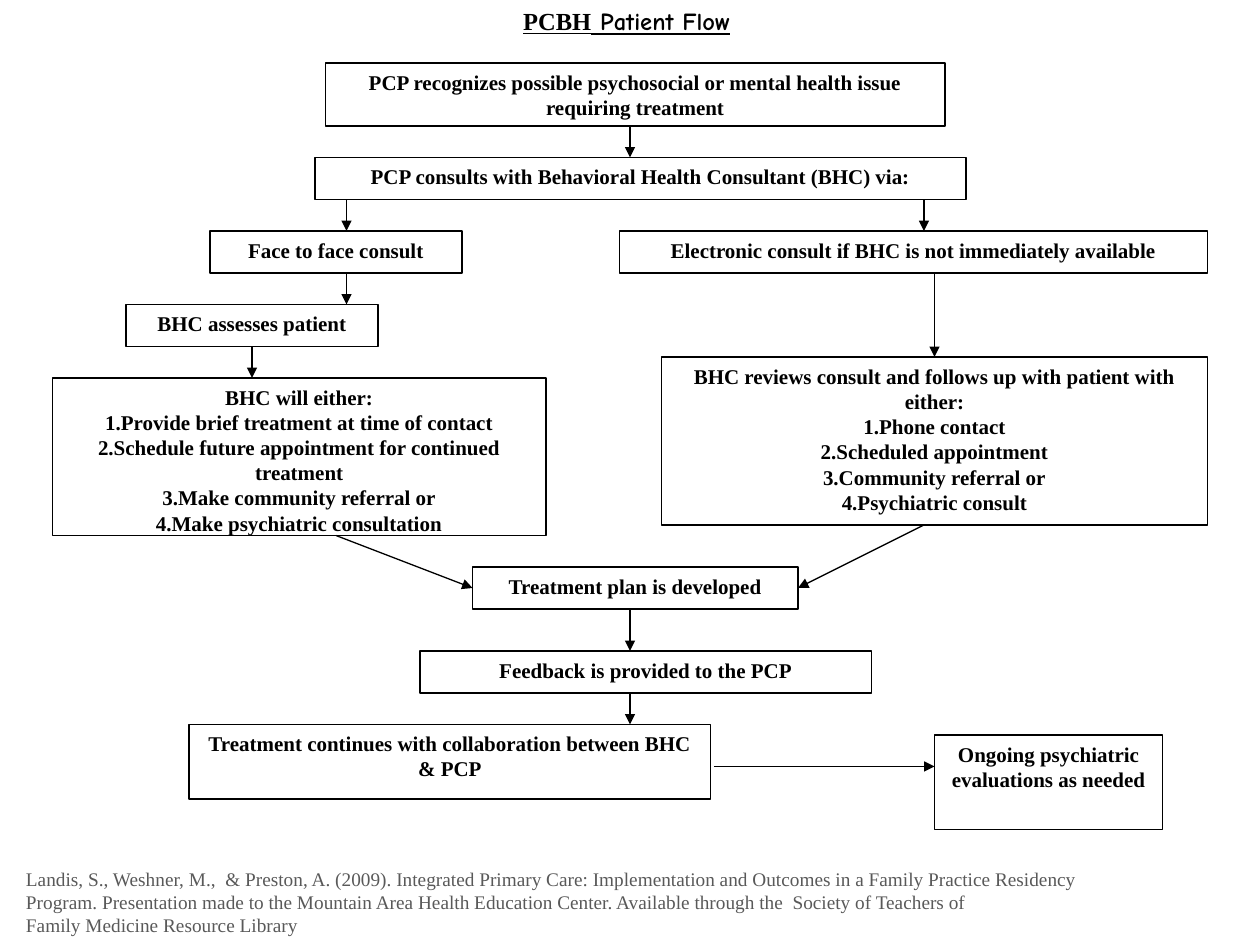
from lxml import etree
from pptx import Presentation
from pptx.dml.color import RGBColor
from pptx.enum.shapes import MSO_CONNECTOR, MSO_SHAPE
from pptx.enum.text import MSO_ANCHOR, MSO_AUTO_SIZE, PP_ALIGN
from pptx.oxml.ns import qn
from pptx.util import Inches, Pt

RECTANGLE = MSO_SHAPE.RECTANGLE
STRAIGHT = MSO_CONNECTOR.STRAIGHT
CENTER, LEFT = PP_ALIGN.CENTER, PP_ALIGN.LEFT
TOP = MSO_ANCHOR.TOP
GROW = MSO_AUTO_SIZE.SHAPE_TO_FIT_TEXT

COLORS = {"ink": "000000", "paper": "FFFFFF", "citation": "595959"}
COLUMNS, ROWS = 120, 90
SERIF, TITLE_FONT = "Times New Roman", "Comic Neue"

# Steps: left, top, width, height in grid units, then paragraphs
STEPS = [
    (31, 6, 59, 6, ["PCP recognizes possible psychosocial or mental health issue requiring treatment"]),
    (30, 15, 62, 4, ["PCP consults with Behavioral Health Consultant (BHC) via:"]),
    (20, 22, 24, 4, ["Face to face consult"]),
    (59, 22, 56, 4, ["Electronic consult if BHC is not immediately available"]),
    (12, 29, 24, 4, ["BHC assesses patient"]),
    (63, 34, 52, 16, ["BHC reviews consult and follows up with patient with either:",
                      "1.Phone contact",
                      "2.Scheduled appointment",
                      "3.Community referral or",
                      "4.Psychiatric consult"]),
    (5, 36, 47, 15, ["BHC will either:",
                     "1.Provide brief treatment at time of contact",
                     "2.Schedule future appointment for continued treatment",
                     "3.Make community referral or",
                     "4.Make psychiatric consultation"]),
    (45, 54, 31, 4, ["Treatment plan is developed"]),
    (40, 62, 43, 4, ["Feedback is provided to the PCP"]),
    (18, 69, 49.7, 7.1, ["Treatment continues with collaboration between BHC & PCP"]),
    (89, 70, 21.75, 9, ["Ongoing psychiatric evaluations as needed"]),
]

# Arrows: start and end points in grid units
ARROWS = [
    ((60, 12), (60, 15)),
    ((33, 19), (33, 22)),
    ((88, 19), (88, 22)),
    ((33, 26), (33, 29)),
    ((89, 26), (89, 34)),
    ((24, 33), (24, 36)),
    ((32, 51), (45, 56)),
    ((88, 50), (76, 56)),
    ((60, 58), (60, 62)),
    ((60, 66), (60, 69)),
    ((68, 73), (89, 73)),
]

CITATION = [
    "Landis, S., Weshner, M.,  & Preston, A. (2009). Integrated Primary Care: "
    "Implementation and Outcomes in a Family Practice Residency",
    "Program. Presentation made to the Mountain Area Health Education Center. "
    "Available through the  Society of Teachers of",
    "Family Medicine Resource Library",
]


class FlowSlide:
    def __init__(self, deck):
        self.slide = deck.slides.add_slide(deck.slide_layouts[6])
        self.column = deck.slide_width / COLUMNS
        self.row = deck.slide_height / ROWS
        self.joints = {}
        fill = self.slide.background.fill
        fill.solid()
        fill.fore_color.rgb = self.color("paper")

    def color(self, name):
        return RGBColor.from_string(COLORS[name])

    def place(self, x, y):
        return round(x * self.column), round(y * self.row)

    def style(self, span, size, color="ink", bold=False, name=SERIF):
        span.font.name = name
        span.font.size = Pt(size)
        span.font.bold = bold
        span.font.color.rgb = self.color(color)

    def set_lines(self, box, lines, size, align, **look):
        frame = box.text_frame
        frame.vertical_anchor = TOP
        frame.text = "\n".join(lines)
        for para in frame.paragraphs:
            para.alignment = align
            for span in para.runs:
                self.style(span, size, **look)

    def title(self, left, top, width, height, parts):
        box = self.slide.shapes.add_textbox(*self.place(left, top), *self.place(width, height))
        box.text_frame.word_wrap = True
        para = box.text_frame.paragraphs[0]
        para.alignment = CENTER
        for text, font in parts:
            span = para.add_run()
            span.text = text
            self.style(span, 14, bold=True, name=font)
            span.font.underline = True

    def step(self, left, top, width, height, lines):
        box = self.slide.shapes.add_shape(
            RECTANGLE, *self.place(left, top), *self.place(width, height))
        box.shadow.inherit = False
        box.fill.solid()
        box.fill.fore_color.rgb = self.color("paper")
        box.line.color.rgb = self.color("ink")
        box.line.width = Pt(0.75)
        box.text_frame.word_wrap = True
        self.set_lines(box, lines, 12, CENTER, bold=True)
        # Remember the middle of each side, in connection-site order
        middle, center = left + width / 2, top + height / 2
        sides = [(middle, top), (left, center), (middle, top + height), (left + width, center)]
        for site, point in enumerate(sides):
            self.joints[point] = (box, site)

    def arrow(self, start, end):
        connector = self.slide.shapes.add_connector(
            STRAIGHT, *self.place(*start), *self.place(*end))
        connector.line.color.rgb = self.color("ink")
        connector.line.width = Pt(0.75)
        properties = connector.element.spPr
        etree.SubElement(properties.find(qn("a:ln")), qn("a:tailEnd"), type="triangle")
        etree.SubElement(properties, qn("a:effectLst"))
        if start in self.joints:
            connector.begin_connect(*self.joints[start])
        if end in self.joints:
            connector.end_connect(*self.joints[end])

    def citation(self, left, top, width, height, lines):
        box = self.slide.shapes.add_textbox(*self.place(left, top), *self.place(width, height))
        box.text_frame.word_wrap = False
        box.text_frame.auto_size = GROW
        self.set_lines(box, lines, 11, LEFT, color="citation")


def main():
    deck = Presentation()
    deck.slide_width, deck.slide_height = Inches(10), Inches(7.5)
    flow = FlowSlide(deck)
    flow.title(24, 0, 71.4, 3.4, [("PCBH", SERIF), (" Patient Flow", TITLE_FONT)])
    for step in STEPS:
        flow.step(*step)
    for start, end in ARROWS:
        flow.arrow(start, end)
    flow.citation(1.3, 82, 103.7, 7.9, CITATION)
    deck.save("out.pptx")


if __name__ == "__main__":
    main()
